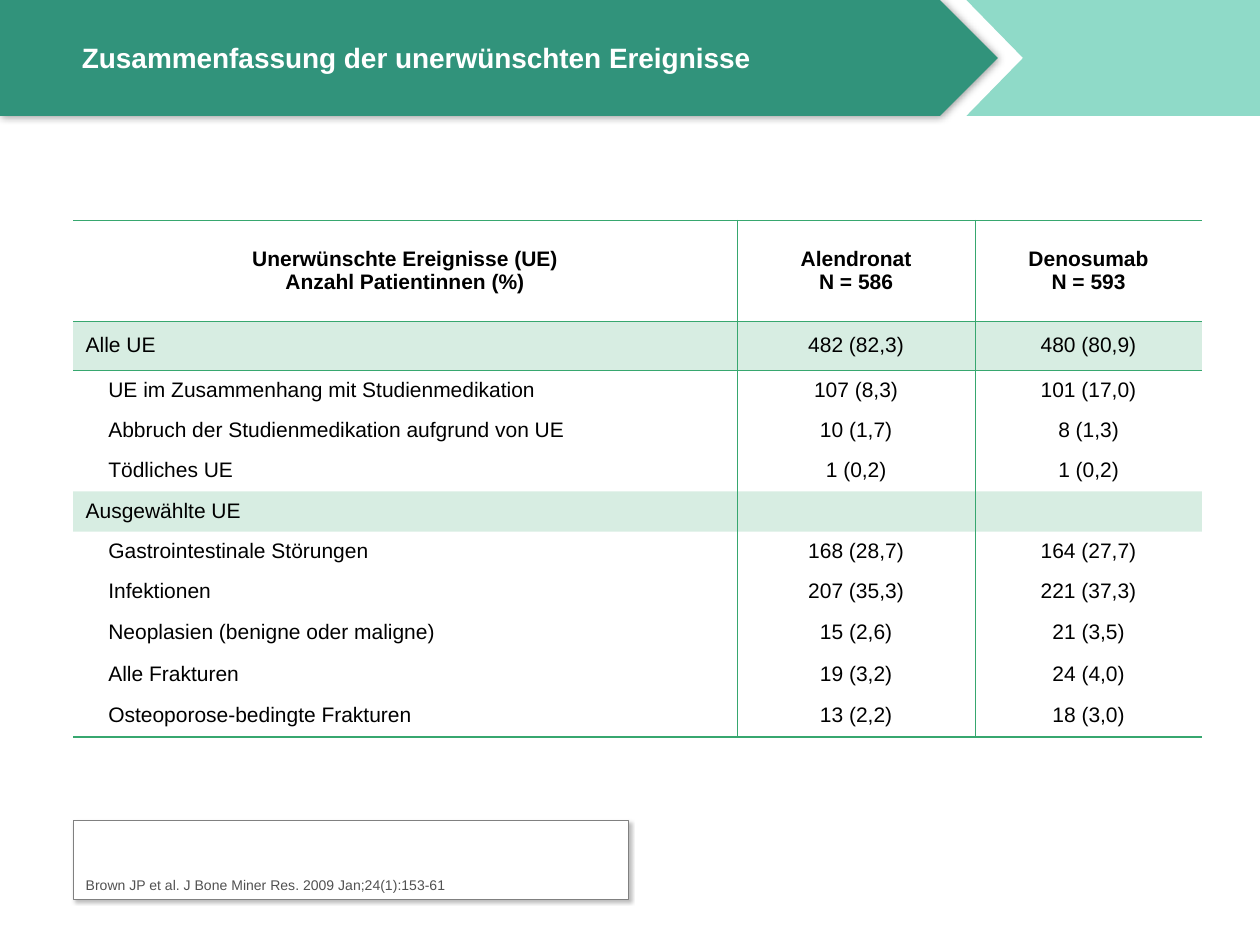
"""Build a slide with a table summarising adverse events of two treatments."""
from lxml import etree
from pptx import Presentation
from pptx.dml.color import RGBColor
from pptx.enum.shapes import MSO_SHAPE
from pptx.enum.text import MSO_ANCHOR, MSO_AUTO_SIZE, PP_ALIGN
from pptx.oxml.ns import qn
from pptx.util import Inches, Pt

PENTAGON = MSO_SHAPE.PENTAGON
MIDDLE, BOTTOM = MSO_ANCHOR.MIDDLE, MSO_ANCHOR.BOTTOM
LEFT, CENTER = PP_ALIGN.LEFT, PP_ALIGN.CENTER
NO_FIT, GROW = MSO_AUTO_SIZE.NONE, MSO_AUTO_SIZE.SHAPE_TO_FIT_TEXT
PLAIN_TABLE = "{2D5ABB26-0587-4C30-8999-92F81FD0307C}"
FONT = "Arial"
COLORS = {
    "banner": "31937B",
    "accent": "8FDAC8",
    "rule": "37A76F",
    "text": "000000",
    "citation": "515151",
    "frame": "808080",
    "white": "FFFFFF",
}

HEADERS = [
    ["Unerwünschte Ereignisse (UE)", "Anzahl Patientinnen (%)"],
    ["Alendronat", "N = 586"],
    ["Denosumab", "N = 593"],
]
EVENTS = [
    ("Alle UE", "482 (82,3)", "480 (80,9)"),
    ("UE im Zusammenhang mit Studienmedikation", "107 (8,3)", "101 (17,0)"),
    ("Abbruch der Studienmedikation aufgrund von UE", "10 (1,7)", "8 (1,3)"),
    ("Tödliches UE", "1 (0,2)", "1 (0,2)"),
    ("Ausgewählte UE", "", ""),
    ("Gastrointestinale Störungen", "168 (28,7)", "164 (27,7)"),
    ("Infektionen", "207 (35,3)", "221 (37,3)"),
    ("Neoplasien (benigne oder maligne)", "15 (2,6)", "21 (3,5)"),
    ("Alle Frakturen", "19 (3,2)", "24 (4,0)"),
    ("Osteoporose-bedingte Frakturen", "13 (2,2)", "18 (3,0)"),
]
GROUPS = {"Alle UE", "Ausgewählte UE"}
COLUMN_WIDTHS = [5.27, 1.89, 1.8]
ROW_HEIGHTS = [0.8, 0.39] + [0.32] * 6 + [0.33] * 3


def rgb(name):
    """Return the named colour."""
    return RGBColor.from_string(COLORS[name])


class SlideBuilder:
    """Holds the style and the current slide."""

    def __init__(self, slide):
        self.slide = slide

    def paint(self, shape, fill, line=None, width=0.25):
        """Give a shape its fill and line, without a shadow."""
        shape.fill.solid()
        shape.fill.fore_color.rgb = rgb(fill)
        if line:
            shape.line.color.rgb = rgb(line)
            shape.line.width = Pt(width)
        else:
            shape.line.fill.background()
        shape.shadow.inherit = False

    def cast_shadow(self, shape, alpha, blur, distance, angle):
        """Add an outer shadow to a painted shape."""
        effects = next(shape.element.iter(qn("a:effectLst")))
        shadow = etree.SubElement(
            effects, qn("a:outerShdw"), blurRad=str(Pt(blur)),
            dist=str(Pt(distance)), dir=str(angle * 60000),
            algn="ctr", rotWithShape="0")
        color = etree.SubElement(shadow, qn("a:srgbClr"), val=COLORS["text"])
        etree.SubElement(color, qn("a:alpha"), val=str(alpha * 1000))

    def banner(self, width, height):
        """Draw the arrow-shaped heading band."""
        band = self.slide.shapes.add_shape(
            PENTAGON, 0, 0, Inches(width), Inches(height))
        self.paint(band, "banner")
        self.cast_shadow(band, 40, 5, 0, 0)

    def outline(self, points, fill):
        """Draw a closed polygon."""
        corners = [(Inches(x), Inches(y)) for x, y in points]
        builder = self.slide.shapes.build_freeform(*corners[0])
        builder.add_line_segments(corners[1:], close=True)
        self.paint(builder.convert_to_shape(), fill)

    def text_run(self, paragraph, text, size, color, bold=False, align=LEFT):
        """Add one formatted run to a paragraph."""
        paragraph.alignment = align
        run = paragraph.add_run()
        run.text = text
        run.font.name = FONT
        run.font.size = Pt(size)
        run.font.bold = bold
        run.font.color.rgb = rgb(color)

    def placeholder(self, holder, box, text, size, color, bold, anchor, fit):
        """Place a template placeholder in front and fill in its text."""
        holder.left, holder.top, holder.width, holder.height = map(Inches, box)
        holder.element.getparent().append(holder.element)
        frame = holder.text_frame
        frame.word_wrap = True
        frame.auto_size = fit
        frame.vertical_anchor = anchor
        self.text_run(frame.paragraphs[0], text, size, color, bold)
        return frame.paragraphs[0]

    def title(self, box, text):
        """Fill the title placeholder."""
        self.placeholder(self.slide.shapes.title, box, text, 16, "white",
                         True, MIDDLE, NO_FIT)

    def citation(self, box, text):
        """Fill the body placeholder with a framed reference."""
        holder = self.slide.placeholders[1]
        paragraph = self.placeholder(holder, box, text, 8, "citation",
                                     False, BOTTOM, GROW)
        paragraph.line_spacing = 0.9
        paragraph.space_before = Pt(2.4)
        properties = paragraph._p.get_or_add_pPr()
        properties.set("marL", "0")
        properties.set("indent", "0")
        etree.SubElement(properties, qn("a:buNone"))
        self.paint(holder, "white", "frame")
        self.cast_shadow(holder, 25, 2, 2, 45)

    def borders(self, cell, widths):
        """Draw the cell borders given as side and point width."""
        properties = cell._tc.get_or_add_tcPr()
        for side in "LRTB":
            if side in widths:
                line = etree.SubElement(properties, qn(f"a:ln{side}"),
                                        w=str(Pt(widths[side])))
                fill = etree.SubElement(line, qn("a:solidFill"))
                etree.SubElement(fill, qn("a:srgbClr"), val=COLORS["rule"])

    def fill_cell(self, cell, group):
        """Tint a group row and leave other rows white."""
        cell.fill.solid()
        cell.fill.fore_color.rgb = rgb("rule" if group else "white")
        if group:
            color = cell._tc.tcPr.find(f"{qn('a:solidFill')}/{qn('a:srgbClr')}")
            etree.SubElement(color, qn("a:alpha"), val="20000")

    def cell_text(self, cell, lines, bold, align, indent):
        """Fill a table cell with its lines."""
        cell.vertical_anchor = MIDDLE
        frame = cell.text_frame
        for number, text in enumerate(lines):
            paragraph = frame.add_paragraph() if number else frame.paragraphs[0]
            if not bold:
                paragraph.line_spacing = 0.95
            if text:
                self.text_run(paragraph, text, 12, "text", bold, align)
            else:
                etree.SubElement(paragraph._p, qn("a:endParaRPr"), sz="1200")
            if indent:
                paragraph._p.get_or_add_pPr().set("marL", str(Inches(indent)))

    def table(self, left, top, headers, rows):
        """Build the ruled table with tinted group rows."""
        frame = self.slide.shapes.add_table(
            len(rows) + 1, len(headers), Inches(left), Inches(top),
            Inches(sum(COLUMN_WIDTHS)), Inches(sum(ROW_HEIGHTS)))
        table = frame.table
        table.first_row = table.horz_banding = False
        next(frame.element.iter(qn("a:tableStyleId"))).text = PLAIN_TABLE
        for column, width in zip(table.columns, COLUMN_WIDTHS):
            column.width = Inches(width)
        for row, height in zip(table.rows, ROW_HEIGHTS):
            row.height = Inches(height)
        content = [headers] + [[[text] for text in row] for row in rows]
        for r, row in enumerate(content):
            group = row[0][0] in GROUPS
            for c, lines in enumerate(row):
                cell = table.cell(r, c)
                widths = {"L": 0.5} if c else {}
                if c < len(headers) - 1:
                    widths["R"] = 0.5
                if r in (0, 1):
                    widths["T"] = 1
                if r in (0, len(rows)):
                    widths["B"] = 1
                self.borders(cell, widths)
                if r:
                    self.fill_cell(cell, group)
                align = LEFT if r and c == 0 else CENTER
                indent = 0.18 if align == LEFT and not group else 0
                self.cell_text(cell, lines, r == 0, align, indent)


def main():
    """Create and save the presentation."""
    deck = Presentation()
    deck.slide_width, deck.slide_height = Inches(10), Inches(7.5)
    page = SlideBuilder(deck.slides.add_slide(deck.slide_layouts[1]))
    page.outline([(7.67, 0), (10, 0), (10, 0.92), (7.67, 0.92), (8.12, 0.46)],
                 "accent")
    page.banner(7.92, 0.92)
    page.citation((0.58, 6.92, 4.41, 0.22),
                  "Brown JP et al. J Bone Miner Res. 2009 Jan;24(1):153-61")
    page.title((0.55, 0.12, 6.7, 0.67),
               "Zusammenfassung der unerwünschten Ereignisse")
    page.table(0.58, 1.75, HEADERS, EVENTS)
    deck.save("out.pptx")


if __name__ == "__main__":
    main()
